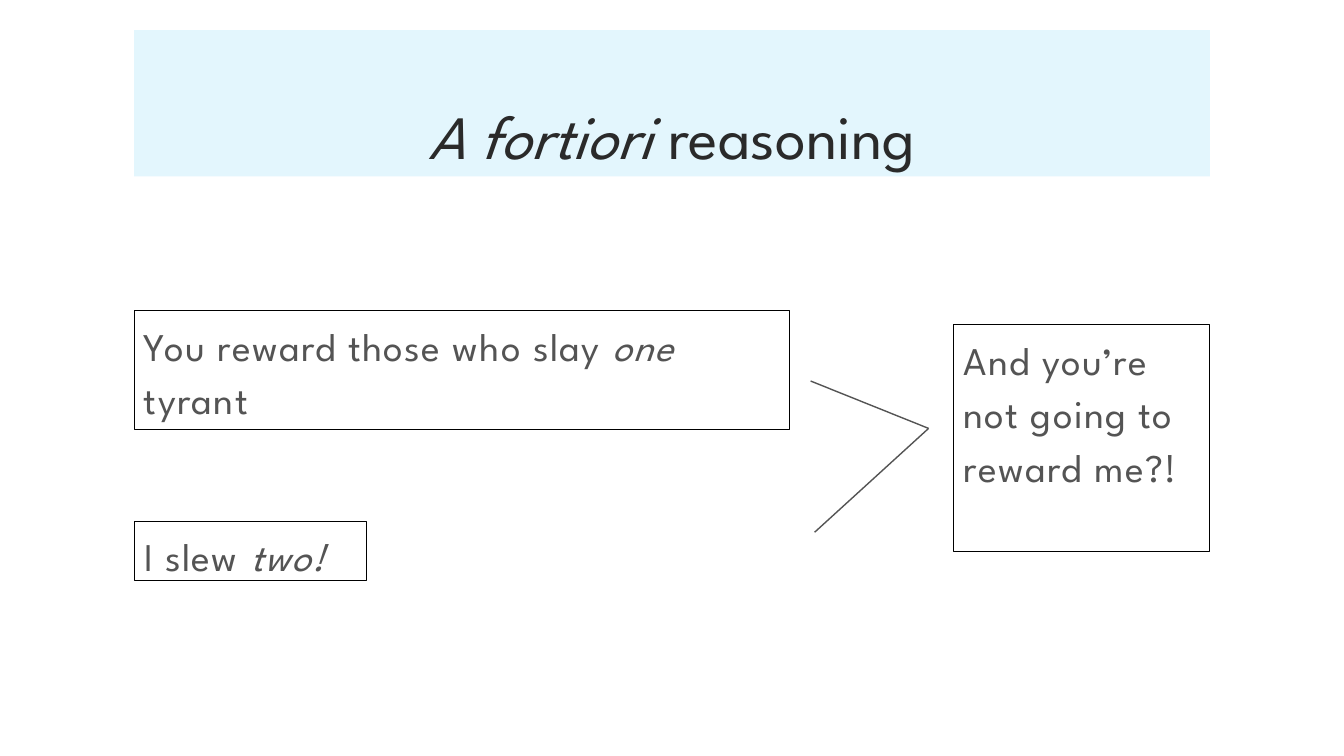
import pptx
import pptx.util
import pptx.dml.color
import pptx.enum.shapes
import pptx.enum.text
import pptx.oxml.ns
import lxml.etree

Inches = pptx.util.Inches
RGBColor = pptx.dml.color.RGBColor
SKY = RGBColor(0x00, 0xB0, 0xF0)
BLACK = RGBColor(0x00, 0x00, 0x00)
CHARCOAL = RGBColor(0x2A, 0x2A, 0x2A)
GRAY = RGBColor(0x54, 0x54, 0x54)


def add_text(place, spans, size, color, tracking=0):
    box = page.shapes.add_textbox(*(Inches(value) for value in place))
    frame = box.text_frame
    frame.word_wrap = True
    para = frame.paragraphs[0]
    para.line_spacing = 1.14
    for text, italic in spans:
        span = para.add_run()
        span.text = text
        font_format = {"name": "League Spartan", "size": pptx.util.Pt(size), "italic": italic}
        for name, value in font_format.items():
            setattr(span.font, name, value)
        span.font.color.rgb = color
        if tracking:
            span.font._element.set("spc", str(tracking))
    return box


deck = pptx.Presentation()
deck.slide_width = Inches(13.33)
deck.slide_height = Inches(7.5)
page = deck.slides.add_slide(deck.slide_layouts[6])

title = add_text((1.33, 0.3, 10.67, 1.45), [("A fortiori", True), (" reasoning", False)], 44, CHARCOAL)
title.text_frame.vertical_anchor = pptx.enum.text.MSO_ANCHOR.BOTTOM
title.text_frame.paragraphs[0].alignment = pptx.enum.text.PP_ALIGN.CENTER
title.fill.solid()
title.fill.fore_color.rgb = SKY
tint = title.fill._xPr.find(".//" + pptx.oxml.ns.qn("a:srgbClr"))
lxml.etree.SubElement(tint, pptx.oxml.ns.qn("a:alpha")).set("val", "11000")

statements = [
    ((1.33, 3.08, 6.5, 1.18), [("You reward those who slay ", False), ("one", True), (" tyrant", False)]),
    ((1.33, 5.17, 2.31, 0.59), [("I slew ", False), ("two!", True)]),
    ((9.46, 3.22, 2.54, 2.25), [("And you’re not going to reward me?!", False)]),
]
for place, spans in statements:
    box = add_text(place, spans, 28, GRAY, 100)
    box.line.color.rgb = BLACK
    box.line.width = pptx.util.Pt(0.75)

for left, top in [(8.08, 5.28), (8.04, 3.78)]:
    line = page.shapes.add_connector(
        pptx.enum.shapes.MSO_CONNECTOR.STRAIGHT,
        Inches(left), Inches(top), Inches(9.21), Inches(4.25),
    )
    line.line.color.rgb = GRAY
    line.line.width = pptx.util.Pt(1)
    lxml.etree.SubElement(line._element.spPr, pptx.oxml.ns.qn("a:effectLst"))

deck.save("out.pptx")
